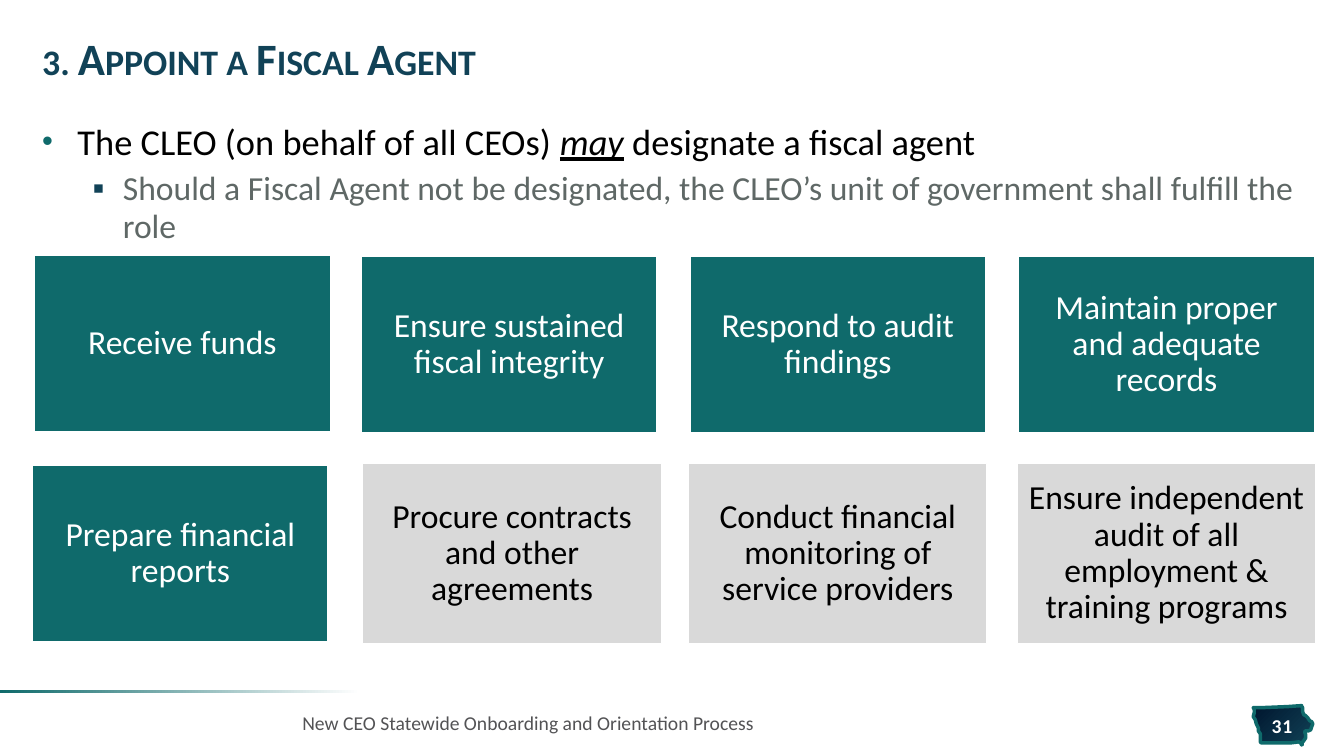
from lxml.etree import SubElement
from pptx import Presentation
from pptx.dml.color import RGBColor
from pptx.enum.shapes import MSO_SHAPE
from pptx.enum.text import MSO_ANCHOR, PP_ALIGN
from pptx.oxml.ns import qn
from pptx.util import Pt

PX = 9144  # one hundredth of an inch
TEAL, NAVY, MIDNIGHT = "0F6A6B", "114257", "00162E"
WHITE, BLACK, SILVER = "FFFFFF", "000000", "D9D9D9"

STATE_OUTLINE = [
    (1291, 700), (1277, 701), (1253, 702), (1243, 702), (1244, 704),
    (1244, 707), (1243, 711), (1245, 714), (1246, 718), (1248, 722),
    (1248, 725), (1250, 728), (1250, 732), (1250, 736), (1251, 737),
    (1280, 737), (1288, 736), (1290, 737), (1291, 739), (1292, 738),
    (1291, 737), (1293, 735), (1295, 732), (1295, 729), (1294, 726),
    (1295, 725), (1298, 725), (1300, 724), (1301, 721), (1302, 718),
    (1301, 716), (1299, 715), (1297, 712), (1295, 710), (1293, 709),
    (1292, 706), (1292, 702), (1291, 701),
]

# left, top, wording
DUTIES = [
    (33, 252, "Receive funds"),
    (357, 253, "Ensure sustained fiscal integrity"),
    (683, 253, "Respond to audit findings"),
    (1009, 253, "Maintain proper and adequate records"),
    (31, 460, "Prepare financial reports"),
]
OPTIONAL_DUTIES = [
    (360, 460, "Procure contracts and other agreements"),
    (683, 460, "Conduct financial monitoring of service providers"),
    (1009, 460, "Ensure independent audit of all employment & training programs"),
]


def color(value):
    return RGBColor.from_string(value)


class SlideBuilder:
    def __init__(self, slide, font_name):
        self.slide = slide
        self.font_name = font_name

    def add_run(self, paragraph, text, size, ink, bold=False, emphasis=False, **attributes):
        """Add a run; emphasis is italic and underlined, attributes go on a:rPr."""
        run = paragraph.add_run()
        run.text = text
        font = run.font
        font.name, font.size, font.bold = self.font_name, Pt(size), bold
        font.italic = font.underline = emphasis
        font.color.rgb = color(ink)
        for name, value in attributes.items():
            run._r.get_or_add_rPr().set(name, value)

    def set_frame(self, shape, anchor, side, edge):
        frame = shape.text_frame
        frame.word_wrap = True
        frame.vertical_anchor = anchor
        frame.margin_left = frame.margin_right = side * PX
        frame.margin_top = frame.margin_bottom = edge * PX
        return frame

    def text_box(self, left, top, width, height, anchor=MSO_ANCHOR.MIDDLE, side=10):
        box = self.slide.shapes.add_textbox(left * PX, top * PX, width * PX, height * PX)
        return self.set_frame(box, anchor, side, 5)

    def rectangle(self, left, top, width, height):
        shape = self.slide.shapes.add_shape(
            MSO_SHAPE.RECTANGLE, left * PX, top * PX, width * PX, height * PX)
        shape.shadow.inherit = False
        return shape

    def outline(self, shape, ink, width):
        shape.line.color.rgb = color(ink)
        shape.line.width = Pt(width)

    def gradient(self, shape, angle, *stops):
        shape.fill.gradient()
        shape.fill.gradient_angle = angle
        for stop, (position, ink) in zip(shape.fill.gradient_stops, stops):
            stop.position = position
            stop.color.rgb = color(ink)

    def card(self, left, top, text, fill, ink, line_width):
        shape = self.rectangle(left, top, 296, 178)
        shape.fill.solid()
        shape.fill.fore_color.rgb = color(fill)
        self.outline(shape, WHITE, line_width)
        paragraph = self.set_frame(shape, MSO_ANCHOR.MIDDLE, 10, 10).paragraphs[0]
        paragraph.alignment = PP_ALIGN.CENTER
        paragraph.line_spacing = 0.9
        self.add_run(paragraph, text, 24, ink)

    def fading_rule(self, left, top, width, height):
        rule = self.rectangle(left, top, width, height)
        self.gradient(rule, 180, (0.06, WHITE), (1, TEAL))
        rule.line.fill.background()

    def state_badge(self, points):
        builder = self.slide.shapes.build_freeform(*points[0], scale=PX)
        builder.add_line_segments(points[1:], close=True)
        badge = builder.convert_to_shape()
        badge.shadow.inherit = False
        self.gradient(badge, 315, (0, MIDNIGHT), (1, NAVY))
        self.outline(badge, TEAL, 2.5)

    def bullet(self, paragraph, symbol, ink, margin, hanging, percent=100):
        properties = paragraph._p.get_or_add_pPr()
        properties.set("marL", str(margin * PX))
        properties.set("indent", str(-hanging * PX))
        bullet_color = SubElement(properties, qn("a:buClr"))
        SubElement(bullet_color, qn("a:srgbClr"), val=ink)
        SubElement(properties, qn("a:buSzPct"), val=str(percent * 1000))
        SubElement(properties, qn("a:buFont"), typeface="Arial")
        SubElement(properties, qn("a:buChar"), char=symbol)


def main():
    presentation = Presentation()
    presentation.slide_width, presentation.slide_height = 1333 * PX, 750 * PX
    slide = presentation.slides.add_slide(presentation.slide_layouts[6])
    builder = SlideBuilder(slide, "Calibri")

    builder.state_badge(STATE_OUTLINE)
    builder.fading_rule(0, 685, 380, 3)
    number = builder.text_box(1246, 708, 51, 23, side=0).paragraphs[0]
    number.alignment = PP_ALIGN.CENTER
    builder.add_run(number, "31", 14, WHITE, bold=True, spc="50")

    title = builder.text_box(32, 24, 1269, 75).paragraphs[0]
    title.line_spacing = 0.85
    builder.add_run(title, "3. Appoint a Fiscal Agent", 32, NAVY, bold=True, cap="small")

    body = builder.text_box(32, 113, 1269, 542, MSO_ANCHOR.TOP)
    point = body.paragraphs[0]
    builder.bullet(point, "•", TEAL, 35, 35, 85)
    builder.add_run(point, "The CLEO (on behalf of all CEOs) ", 26, BLACK)
    builder.add_run(point, "may", 26, BLACK, emphasis=True)
    builder.add_run(point, " designate a fiscal agent", 26, BLACK)
    detail = body.add_paragraph()
    detail.level = 1
    builder.bullet(detail, "▪", NAVY, 80, 30)
    detail.line_spacing = 0.95
    detail.space_before = Pt(5)
    builder.add_run(
        detail,
        "Should a Fiscal Agent not be designated, the CLEO’s unit of government "
        "shall fulfill the role", 24, "5F6866")

    for left, top, text in DUTIES:
        builder.card(left, top, text, TEAL, WHITE, 3)
    for left, top, text in OPTIONAL_DUTIES:
        builder.card(left, top, text, SILVER, BLACK, 0.75)

    footer = builder.text_box(290, 697, 906, 40).paragraphs[0]
    builder.add_run(footer, "New CEO Statewide Onboarding and Orientation Process", 14, "535355")

    presentation.save("out.pptx")


if __name__ == "__main__":
    main()
